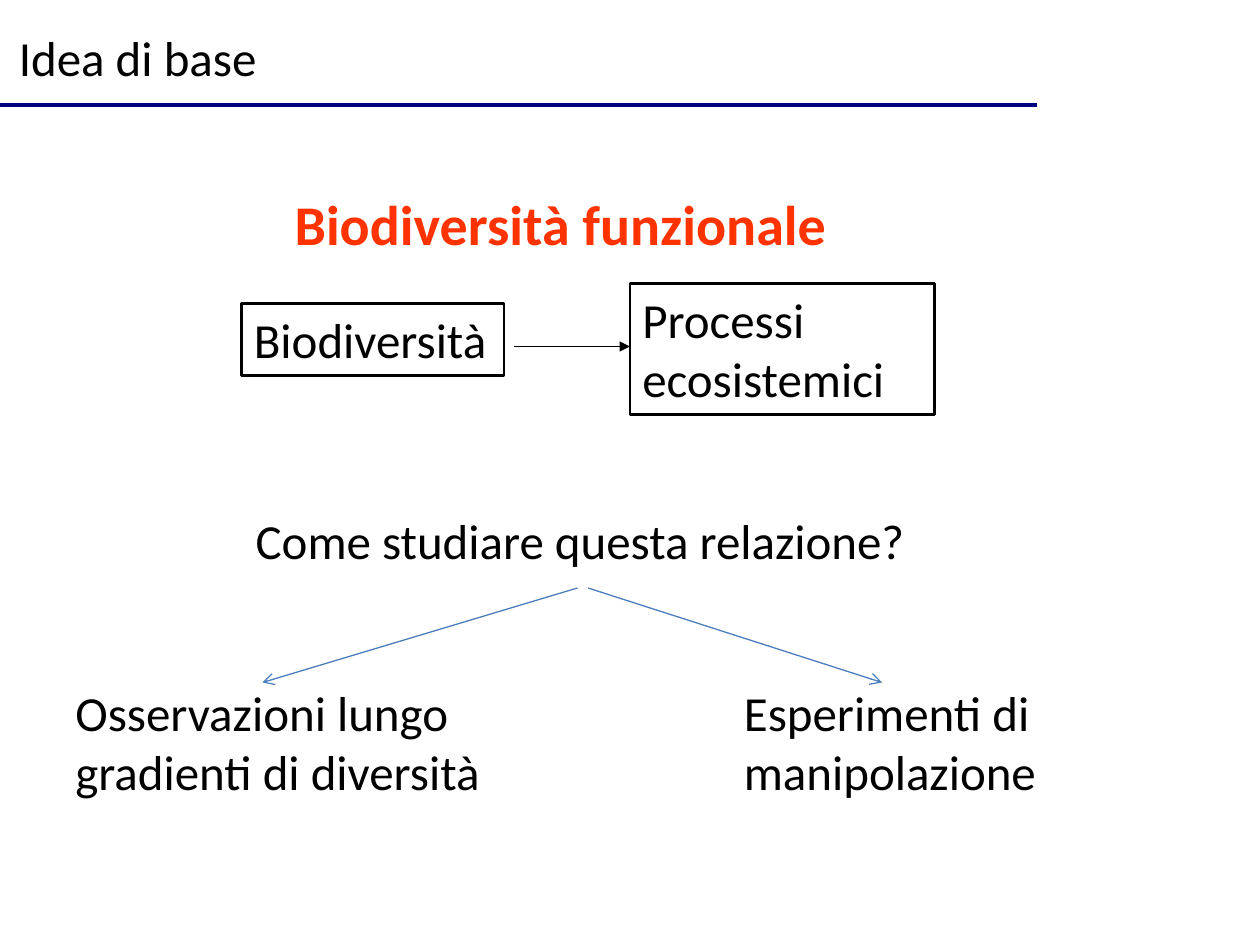
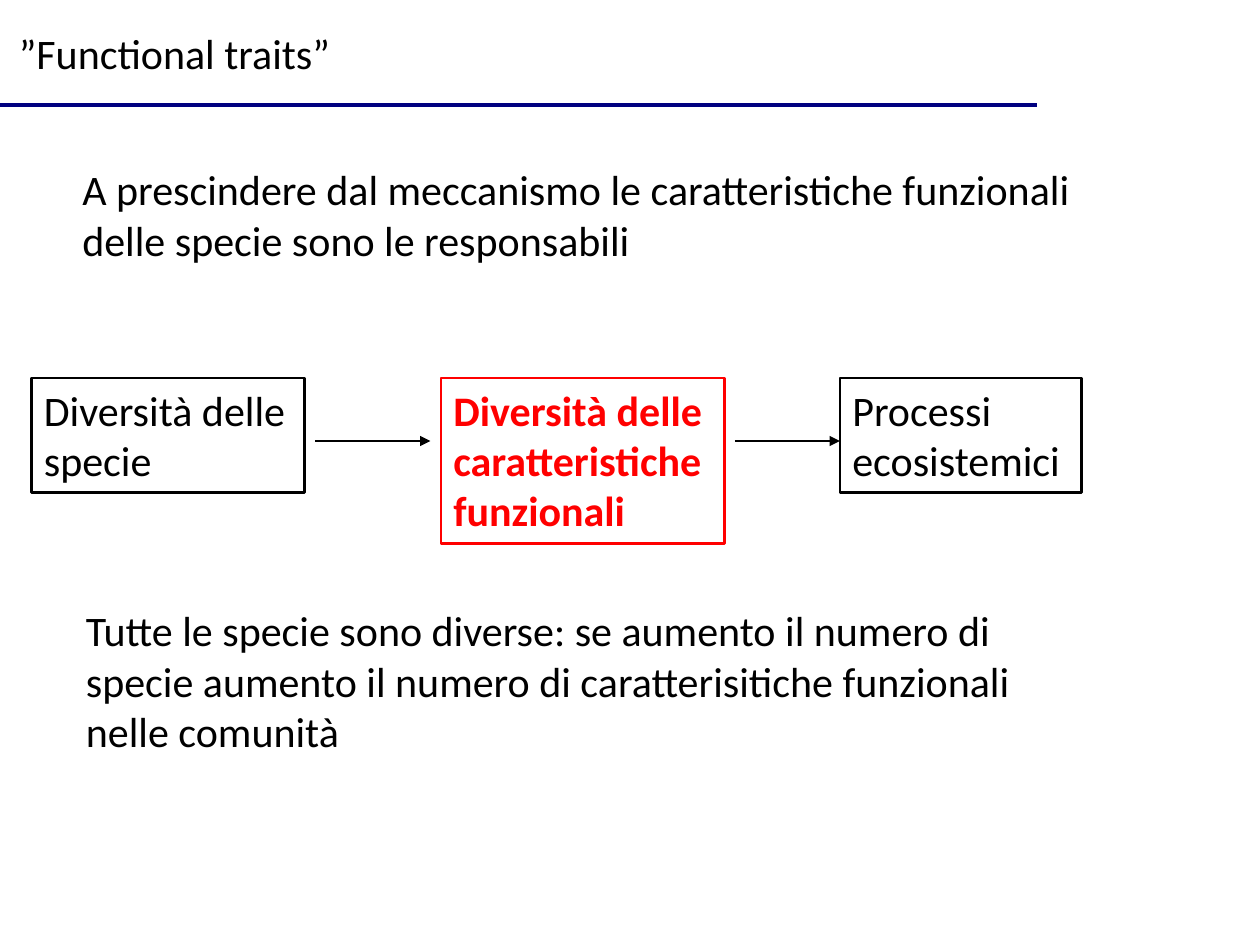
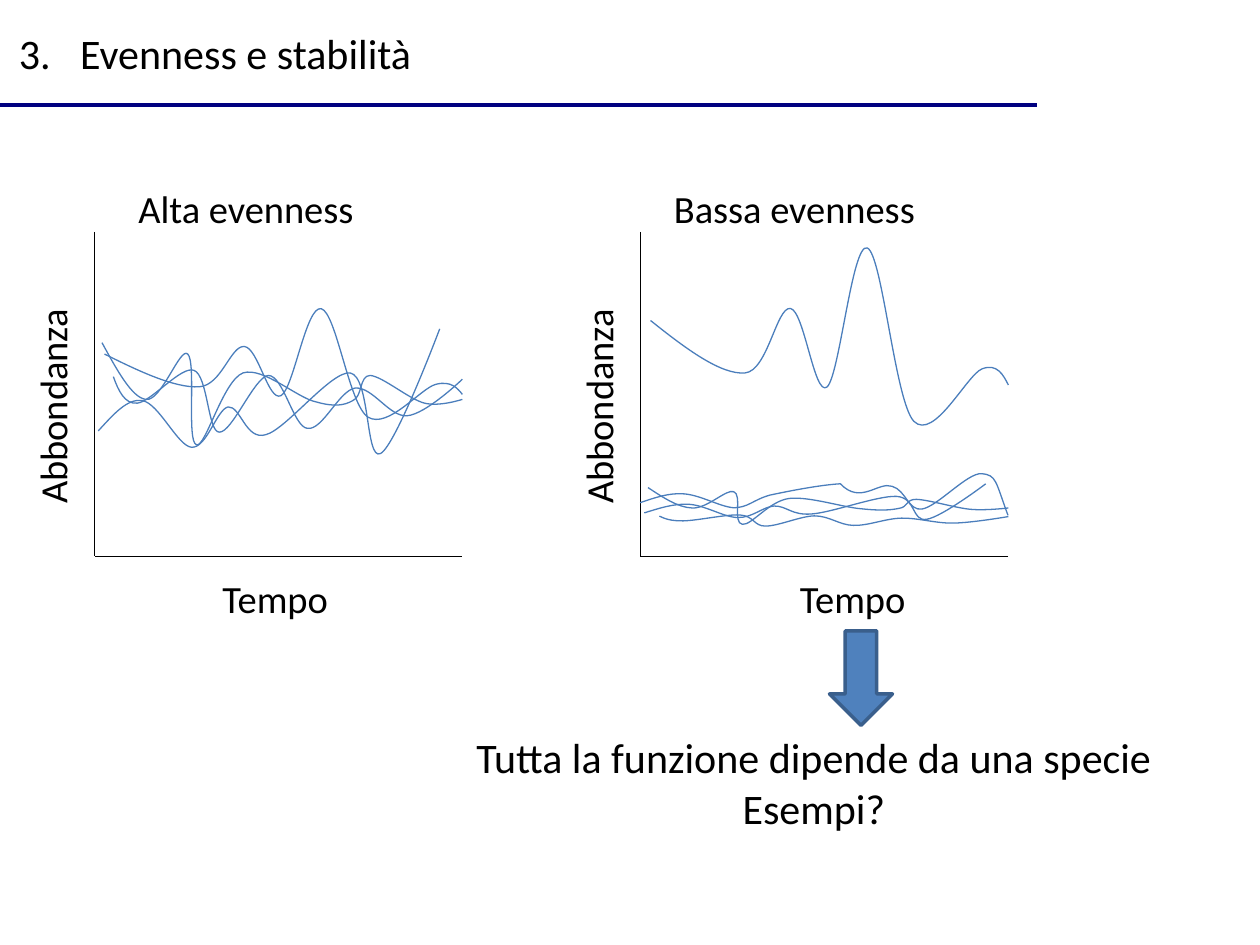
from dataclasses import dataclass

from lxml.etree import SubElement
from pptx import Presentation
from pptx.dml.color import RGBColor
from pptx.enum.shapes import MSO_CONNECTOR, MSO_SHAPE
from pptx.enum.text import MSO_ANCHOR, MSO_AUTO_SIZE, PP_ALIGN
from pptx.oxml.ns import qn
from pptx.util import Pt


@dataclass(frozen=True)
class Theme:
    font: str = "Calibri"
    black: str = "000000"
    navy: str = "000080"
    orange: str = "FF3300"
    red: str = "FF0000"
    blue: str = "4B7EBC"
    fill: str = "4F81BD"
    edge: str = "3A5F8C"
    huge: int = 32
    large: int = 28
    medium: int = 24
    small: int = 22
    thin: float = 0.75
    frame: float = 1.5
    thick: float = 2


THEME = Theme()
UNIT = 0.72   # points in a hundredth of an inch, the unit of the curves
SHIFT = 312   # distance between the two graphs

# Each species: start and Bezier points under high evenness,
# then its highest level and vertical scale under low evenness
SPECIES = [
    ([(78, 342), (90, 329), (101, 316), (113, 318), (126, 320), (141, 354), (152, 355),
      (164, 356), (172, 325), (181, 323), (191, 322), (195, 350), (211, 345),
      (227, 341), (263, 294), (278, 296), (294, 299), (290, 366), (302, 360),
      (314, 354), (349, 261), (349, 261)], 384, 0.285),
    ([(90, 299), (94, 310), (99, 321), (109, 320), (120, 319), (144, 290), (154, 294),
      (165, 298), (165, 343), (174, 343), (184, 344), (202, 299), (213, 298),
      (225, 298), (233, 339), (244, 340), (256, 342), (269, 310), (282, 308),
      (296, 307), (309, 331), (323, 330), (338, 329), (367, 301), (367, 301)], 408, 0.18),
    ([(83, 281), (111, 295), (139, 308), (158, 307), (176, 306), (183, 274), (194, 275),
      (205, 276), (213, 319), (223, 314), (233, 309), (243, 242), (255, 245),
      (267, 248), (277, 321), (292, 331), (308, 341), (334, 308), (346, 305),
      (358, 302), (363, 308), (367, 313)], 192, 1.6),
    ([(81, 272), (93, 294), (105, 316), (116, 317), (128, 319), (143, 275), (149, 281),
      (156, 287), (148, 351), (156, 353), (163, 356), (177, 302), (193, 296),
      (209, 291), (236, 316), (251, 319), (265, 323), (273, 322), (280, 318),
      (288, 315), (285, 298), (294, 298), (304, 299), (325, 317), (337, 320),
      (349, 323), (367, 317), (367, 317)], 387, 0.36),
]
RARE = [(508, 399), (520, 395), (531, 391), (543, 392), (556, 393), (571, 402), (582, 403),
        (594, 403), (597, 397), (611, 393), (625, 390), (650, 385), (667, 384),
        (683, 401), (697, 382), (708, 386), (719, 389), (721, 406), (732, 404),
        (744, 402), (768, 375), (779, 376), (791, 377), (790, 382), (800, 409)]


def rgb(code):
    return RGBColor.from_string(code)


def stroke(shape, color, width):
    shape.line.color.rgb = rgb(color)
    shape.line.width = Pt(width)


def write(shape, text, size, color=THEME.black, bold=False,
          align=PP_ALIGN.LEFT, wrap=True):
    frame = shape.text_frame
    frame.text = text
    frame.word_wrap = wrap
    frame.auto_size = MSO_AUTO_SIZE.NONE
    frame.vertical_anchor = MSO_ANCHOR.TOP
    for par in frame.paragraphs:
        par.alignment = align
        par.font.name = THEME.font
        par.font.size = Pt(size)
        par.font.bold = bold
        par.font.color.rgb = rgb(color)


def label(slide, area, text, size, turn=0, **style):
    box = slide.shapes.add_textbox(*map(Pt, area))
    box.rotation = turn
    write(box, text, size, **style)


def frame_box(slide, area, text, size, color=THEME.black, bold=False):
    box = slide.shapes.add_shape(MSO_SHAPE.RECTANGLE, *map(Pt, area))
    box.shadow.inherit = False
    box.fill.background()
    stroke(box, color, THEME.frame)
    write(box, text, size, color, bold)


def line(slide, start, end, color=THEME.black, width=THEME.thin, head=None):
    link = slide.shapes.add_connector(
        MSO_CONNECTOR.STRAIGHT, *map(Pt, (*start, *end)))
    stroke(link, color, width)
    if head:
        SubElement(link.line._get_or_add_ln(), qn("a:tailEnd"), type=head)
    SubElement(link._element.spPr, qn("a:effectLst"))


def curve(slide, points):
    start, *rest = [(Pt(x * UNIT), Pt(y * UNIT)) for x, y in points]
    build = slide.shapes.build_freeform(*start)
    build.add_line_segments(rest, close=False)
    shape = build.convert_to_shape()
    shape.shadow.inherit = False
    shape.fill.background()
    stroke(shape, THEME.blue, THEME.thin)
    # Every three straight segments become one Bezier segment
    steps = shape._element.xpath(".//a:lnTo")
    for i in range(0, len(steps), 3):
        bend = SubElement(steps[i].getparent(), qn("a:cubicBezTo"))
        for step in steps[i:i + 3]:
            bend.append(step[0])
            step.getparent().remove(step)


def lower(points, top, scale):
    peak = min(y for _, y in points)
    return [(x + SHIFT / UNIT, top + (y - peak) * scale) for x, y in points]


def graph(slide, left, name, name_left, time_left, curves):
    top, base = 132.5, 318
    line(slide, (left, top), (left, base))
    line(slide, (left + 210, base), (left, base))
    for points in curves:
        curve(slide, points)
    label(slide, (time_left, 325, 90, 34), "Tempo", THEME.small)
    label(slide, (left - 93, 209, 138, 34), "Abbondanza", THEME.small, turn=270)
    label(slide, (name_left, 102, 234, 34), name, THEME.small)


def page(deck, title, size, width, height):
    slide = deck.slides.add_slide(deck.slide_layouts[5])
    head = slide.shapes.title
    head.left, head.top, head.width, head.height = map(Pt, (3.6, 12, width, height))
    write(head, title, size, wrap=False)
    line(slide, (0, 60), (592.5, 60), THEME.navy, THEME.thick)
    return slide


def idea(deck):
    size = THEME.large
    slide = page(deck, "Idea di base", size, 152, 41)
    label(slide, (14.4, 105, 612, 46), "Biodiversità funzionale", THEME.huge,
          color=THEME.orange, bold=True, align=PP_ALIGN.CENTER)
    frame_box(slide, (138, 173.5, 150, 41), "Biodiversità", size)
    frame_box(slide, (360, 162, 174, 75), "Processi ecosistemici", size)
    line(slide, (294, 198), (360, 198), head="triangle")
    # The two ways to study the relation
    label(slide, (139, 288, 389, 41), "Come studiare questa relazione?", size, wrap=False)
    ways = [(36, "Osservazioni lungo gradienti di diversità", 330, 150),
            (418, "Esperimenti di manipolazione", 336, 504)]
    for left, text, start, end in ways:
        label(slide, (left, 386.5, 253.5, 75), text, size)
        line(slide, (start, 336), (end, 390), THEME.blue, head="arrow")


def traits(deck):
    size = THEME.medium
    slide = page(deck, "”Functional traits”", size, 196, 36)
    label(slide, (40, 90, 590, 65.5),
          "A prescindere dal meccanismo le caratteristiche funzionali "
          "delle specie sono le responsabili", size)
    frame_box(slide, (18, 216, 156, 65.5), "Diversità delle specie", size)
    frame_box(slide, (252, 216, 162, 94.5), "Diversità delle caratteristiche funzionali",
              size, THEME.red, True)
    frame_box(slide, (480, 216, 138, 65.5), "Processi ecosistemici", size)
    for start, end in [(180, 246), (420, 480)]:
        line(slide, (start, 252), (end, 252), head="triangle")
    label(slide, (42, 342, 590, 94.5),
          "Tutte le specie sono diverse: se aumento il numero di specie aumento "
          "il numero di caratterisitiche funzionali nelle comunità", size)


def evenness(deck):
    slide = page(deck, "3.\tEvenness e stabilità", THEME.medium, 240.5, 36)
    # Hanging indent for the number
    props = slide.shapes.title.text_frame.paragraphs[0]._p.get_or_add_pPr()
    props.set("marL", str(Pt(35)))
    props.set("indent", str(-Pt(35)))
    # Graphs
    high = [points for points, _, _ in SPECIES]
    low = [lower(*kind) for kind in SPECIES] + [RARE]
    graph(slide, 54, "Alta evenness", 72, 120, high)
    graph(slide, 54 + SHIFT, "Bassa evenness", 378, 450, low)
    # Conclusion
    arrow = slide.shapes.add_shape(MSO_SHAPE.DOWN_ARROW, *map(Pt, (474, 360.5, 36, 54)))
    arrow.shadow.inherit = False
    arrow.fill.solid()
    arrow.fill.fore_color.rgb = rgb(THEME.fill)
    stroke(arrow, THEME.edge, THEME.thick)
    label(slide, (222, 414.5, 486, 65.5),
          "Tutta la funzione dipende da una specie\nEsempi?",
          THEME.medium, align=PP_ALIGN.CENTER)


def main():
    deck = Presentation()
    deck.slide_width, deck.slide_height = Pt(720), Pt(540)
    idea(deck)
    traits(deck)
    evenness(deck)
    deck.save("out.pptx")


if __name__ == "__main__":
    main()
